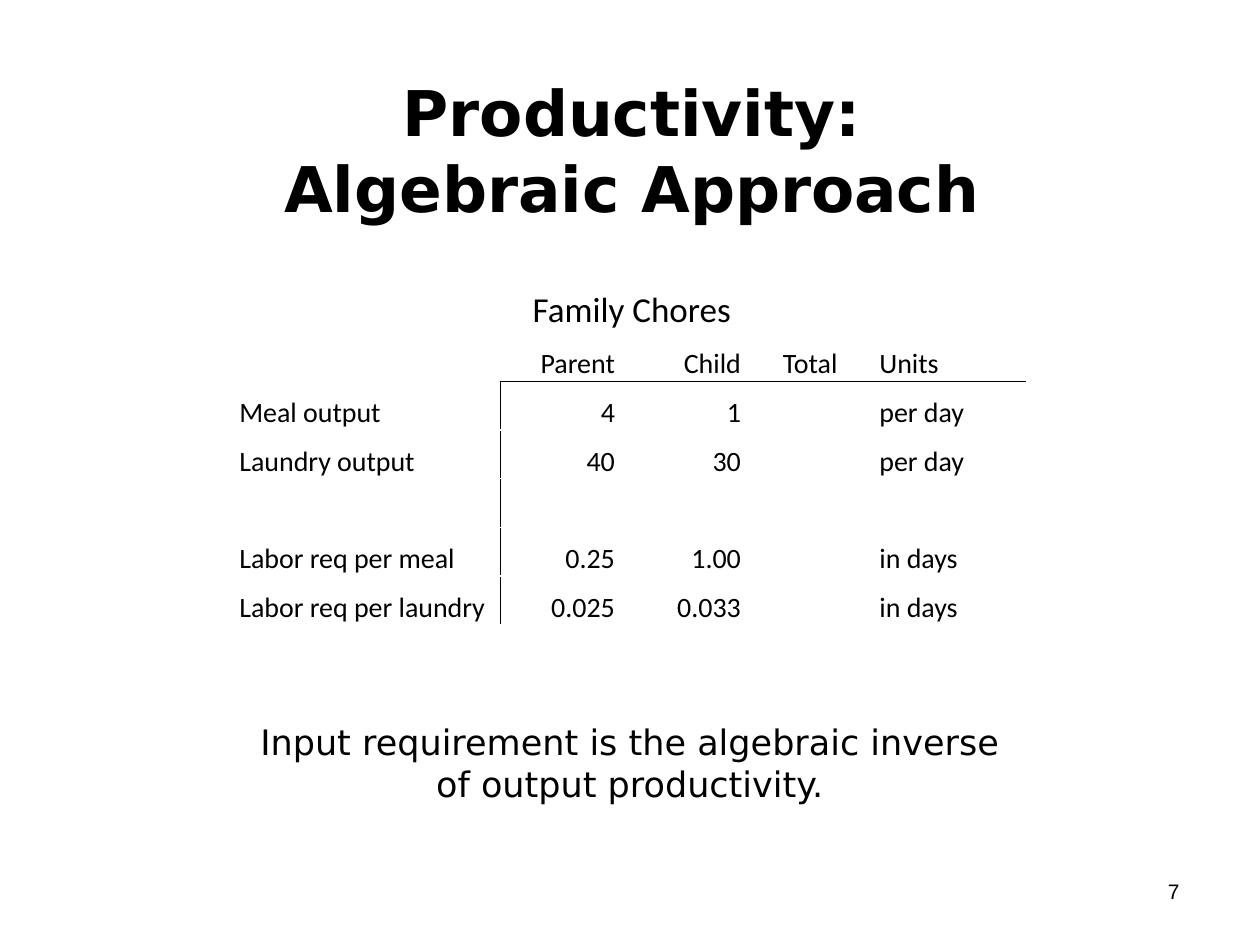
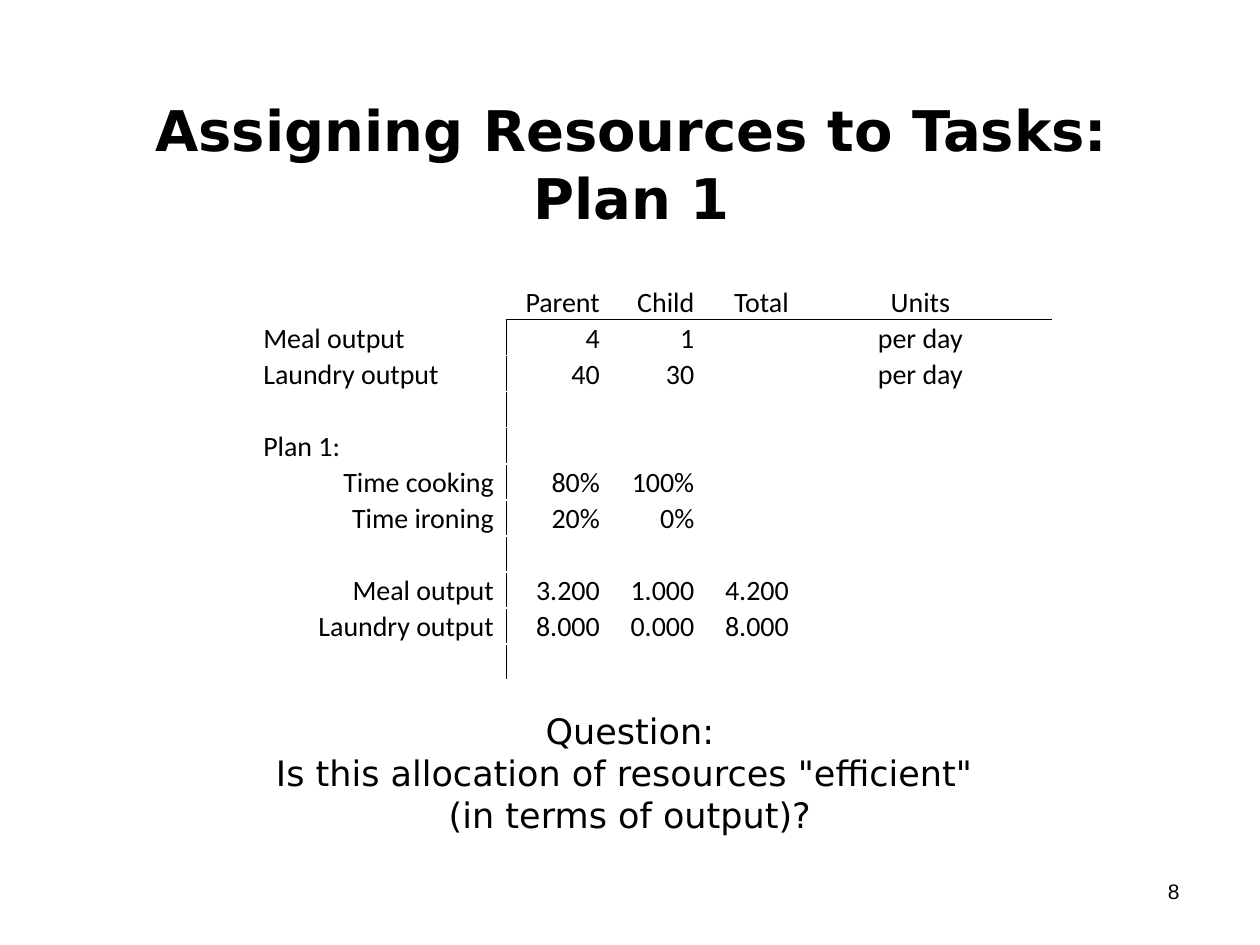
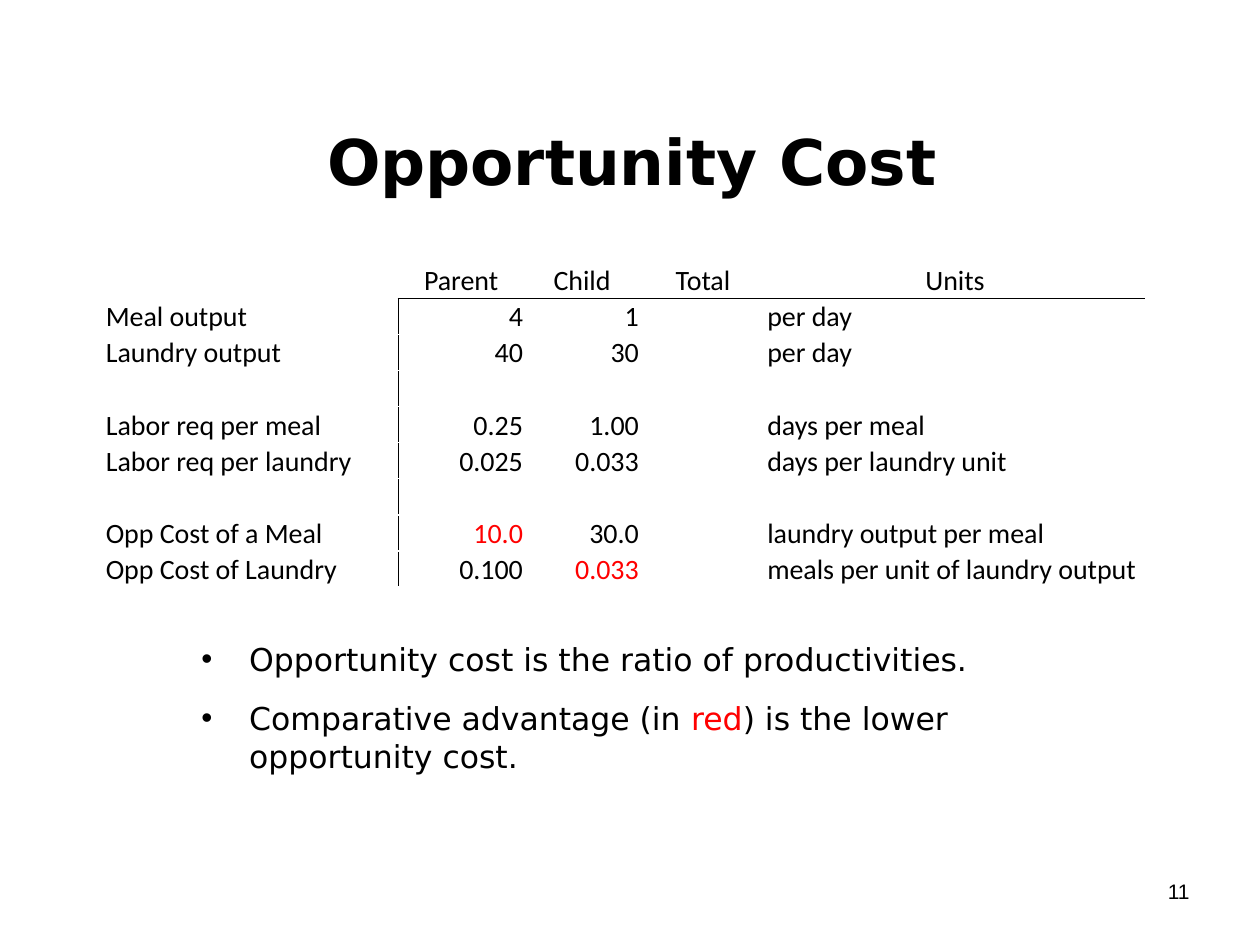
"""Builds three slides on productivity, plans and opportunity cost."""
from lxml.etree import SubElement
from pptx import Presentation
from pptx.dml.color import RGBColor as RGB
from pptx.enum.text import MSO_ANCHOR as ANCHOR, PP_ALIGN as AL
from pptx.oxml.ns import qn
from pptx.util import Inches, Pt

HUES = {"ink": "000000", "red": "FF0000"}
ALIGN = {"l": AL.LEFT, "c": AL.CENTER, "r": AL.RIGHT}
SANS, GRID, PAGE = "DejaVu Sans", "Calibri", "Arial"
HEAD = ["", "Parent", "Child", "Total", "Units"]
OUTPUT = [("Meal output", "4", "1", "", "per day"),
          ("Laundry output", "40", "30", "", "per day")]
GAP = ("",) * 5

# Text between bars is red.
SLIDES = [
    {"page": "7", "title": "Productivity:\vAlgebraic Approach", "size": 36,
     "place": (0.5, 1.37),
     "table": {"at": (1.89, 2.25), "tall": 2.71, "cols": (2.08, 0.92, 1, 1.08, 1.17),
               "top": "Family Chores", "head": "lrrcl", "body": "lrrcl", "inset": (),
               "rows": [*OUTPUT, GAP,
                        ("Labor req per meal", "0.25", "1.00", "", "in days"),
                        ("Labor req per laundry", "0.025", "0.033", "", "in days")]},
     "note": {"at": (5.67, 0.77), "size": 20, "bullet": False,
              "lines": ["Input requirement is the algebraic inverse",
                        "of output productivity."]}},
    {"page": "8", "title": "Assigning Resources to Tasks:\vPlan 1", "size": 32,
     "place": (0.67, 1.25),
     "table": {"at": (2.08, 2.25), "tall": 3.15, "cols": (1.94, 0.75, 0.75, 0.75, 2.07),
               "top": "", "head": "lrrrc", "body": "lrrrc",
               "inset": ("Time cooking", "Time ironing", "Meal output", "Laundry output"),
               "rows": [*OUTPUT, GAP,
                        ("Plan 1:", "", "", "", ""),
                        ("Time cooking", "80%", "100%", "", ""),
                        ("Time ironing", "20%", "0%", "", ""),
                        GAP,
                        ("Meal output", "3.200", "1.000", "4.200", ""),
                        ("Laundry output", "8.000", "0.000", "8.000", ""),
                        GAP]},
     "note": {"at": (5.58, 1.11), "size": 20, "bullet": False,
              "lines": ["Question:",
                        'Is this allocation of resources "efficient" ',
                        "(in terms of output)?"]}},
    {"page": "11", "title": "Opportunity Cost", "size": 36, "place": (0.75, 1.05),
     "table": {"at": (0.83, 2.08), "tall": 2.58, "cols": (2.33, 1, 0.92, 1, 3),
               "top": "", "head": "lcccc", "body": "lrrcl", "inset": (),
               "rows": [*OUTPUT, GAP,
                        ("Labor req per meal", "0.25", "1.00", "", "days per meal"),
                        ("Labor req per laundry", "0.025", "0.033", "",
                         "days per laundry unit"),
                        GAP,
                        ("Opp Cost of a Meal", "|10.0", "30.0", "",
                         "laundry output per meal"),
                        ("Opp Cost of Laundry", "0.100", "|0.033", "",
                         "meals per unit of laundry output")]},
     "note": {"at": (5.03, 1.18), "size": 18, "bullet": True,
              "lines": ["Opportunity cost is the ratio of productivities.",
                        "Comparative advantage (in |red|) is the lower opportunity cost."]}},
]


def write(para, text, face, size, align="l", bold=False):
    first, *rest = text.split("|")
    para.text = first
    para.alignment = ALIGN[align]
    runs = [(run, "ink") for run in para.runs]
    for n, part in enumerate(rest):
        run = para.add_run()
        run.text = part
        runs.append((run, ("red", "ink")[n % 2]))
    for run, hue in runs:
        font = run.font
        font.name, font.size, font.bold = face, Pt(size), bold
        font.color.rgb = RGB.from_string(HUES[hue])
    if not text:
        SubElement(para._p, qn("a:endParaRPr"), sz=str(size * 100))


def add_box(slide, *place):
    frame = slide.shapes.add_textbox(*map(Inches, place)).text_frame
    frame.word_wrap = True
    return frame


def add_title(slide, text, size, place):
    top, tall = place
    frame = add_box(slide, 0.39, top, 9.25, tall)
    frame.margin_left = frame.margin_right = frame.margin_top = frame.margin_bottom = 0
    frame.vertical_anchor = ANCHOR.MIDDLE
    write(frame.paragraphs[0], text, SANS, size, "c", True)


def rule(cell, sides):
    for side in sides:
        line = SubElement(cell._tc.get_or_add_tcPr(), qn("a:ln" + side), w=str(Pt(0.5)))
        fill = SubElement(line, qn("a:solidFill"))
        SubElement(fill, qn("a:srgbClr"), val=HUES["ink"])


def fill_cell(cell, text, align, size=16, pad=0.01, sides=""):
    cell.margin_left = cell.margin_top = Inches(0.01)
    cell.margin_right, cell.margin_bottom = Inches(pad), 0
    cell.vertical_anchor = ANCHOR.BOTTOM
    rule(cell, sides)
    cell.fill.background()
    write(cell.text_frame.paragraphs[0], text, GRID, size, align)


def add_grid(slide, data):
    lead = 1 if data["top"] else 0
    rows = [HEAD, *data["rows"]]
    count, cols = len(rows) + lead, data["cols"]
    place = (*data["at"], sum(cols), data["tall"])
    table = slide.shapes.add_table(count, len(cols), *map(Inches, place)).table
    table.first_row = table.horz_banding = False
    for col, wide in zip(table.columns, cols):
        col.width = Inches(wide)
    for row in table.rows:
        row.height = Inches(data["tall"] / count)
    if lead:
        for c in range(len(cols)):
            fill_cell(table.cell(0, c), "" if c else data["top"], "c", 20)
        table.cell(0, 0).merge(table.cell(0, len(cols) - 1))
    for r, row in enumerate(rows):
        for c, text in enumerate(row):
            sides = ("L" if r and c == 1 else "") + ("R" if r and c == 0 else "")
            sides += ("T" if r == 1 and c else "") + ("B" if r == 0 and c else "")
            inset = c == 0 and r > len(OUTPUT) and text in data["inset"]
            align = "r" if inset else data["body" if r else "head"][c]
            fill_cell(table.cell(r + lead, c), text, align,
                      pad=0.1 if inset else 0.01, sides=sides)


def add_note(slide, data):
    top, tall = data["at"]
    frame = add_box(slide, 1.5, top, 7, tall)
    for n, text in enumerate(data["lines"]):
        para = frame.add_paragraph() if n else frame.paragraphs[0]
        write(para, text, SANS, data["size"], "l" if data["bullet"] else "c")
        if data["bullet"]:
            para.space_before = Pt(12 if n else 0)
            props = para._p.get_or_add_pPr()
            props.set("marL", str(Inches(0.38)))
            props.set("indent", str(-Inches(0.38)))
            SubElement(props, qn("a:buFont"), typeface=PAGE)
            SubElement(props, qn("a:buChar"), char="•")


def main():
    deck = Presentation()
    deck.slide_width, deck.slide_height = Inches(10), Inches(7.5)
    for data in SLIDES:
        slide = deck.slides.add_slide(deck.slide_layouts[6])
        page = add_box(slide, 9.17, 6.92, 0.42, 0.3)
        write(page.paragraphs[0], data["page"], PAGE, 12)
        add_title(slide, data["title"], data["size"], data["place"])
        add_grid(slide, data["table"])
        add_note(slide, data["note"])
    deck.save("out.pptx")


if __name__ == "__main__":
    main()
